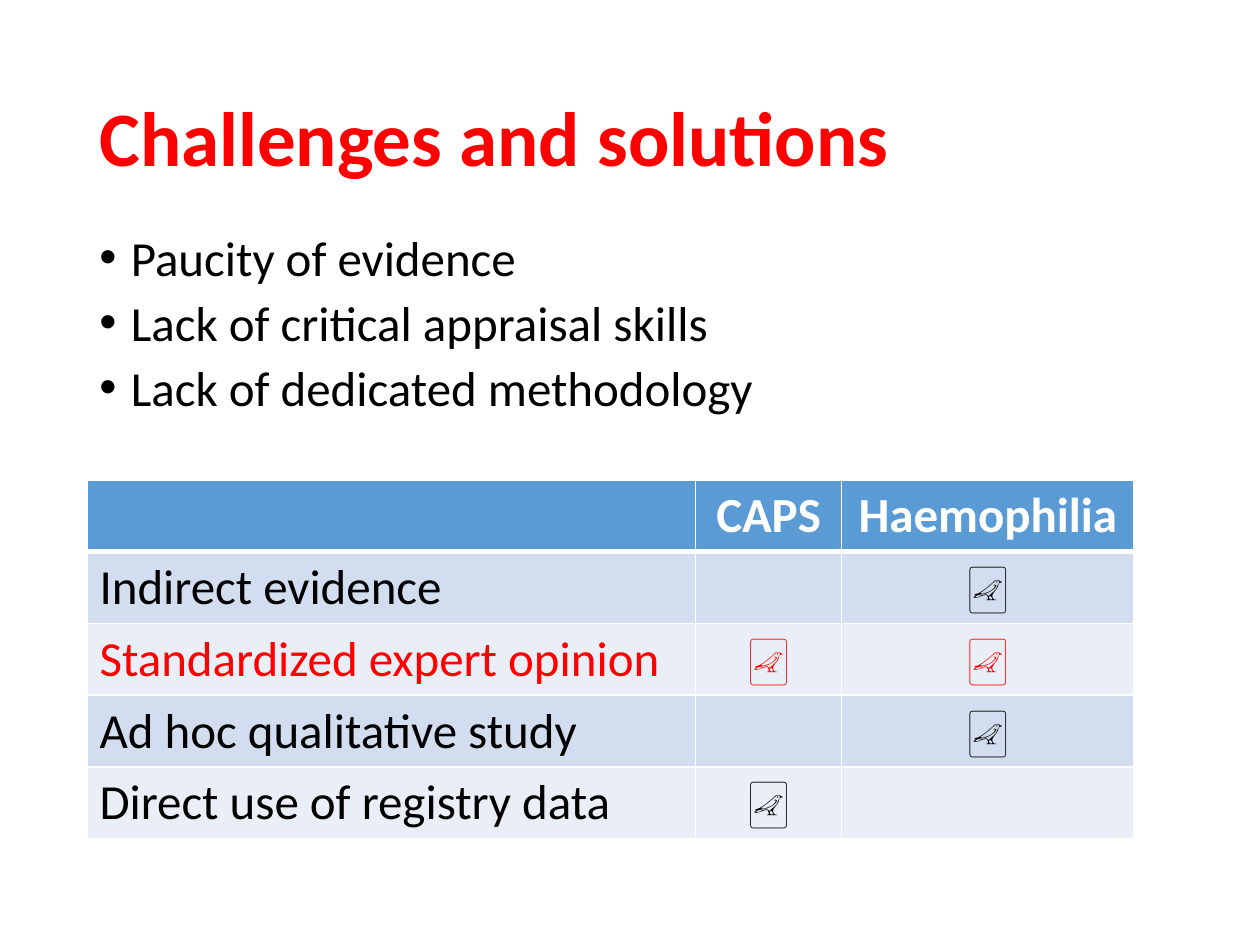
from pptx import Presentation
from pptx.dml.color import RGBColor
from pptx.enum.text import MSO_ANCHOR, PP_ALIGN
from pptx.oxml.ns import qn
from pptx.util import Inches, Pt
from lxml.etree import SubElement

FONT = "Calibri"
BLACK, WHITE, RED = "000000", "FFFFFF", "FF0000"
HEADER_FILL = "5B9BD5"
BAND_FILLS = ("D2DEEF", "EAEFF7")
TICK = "🀐"

BULLETS = (
    "Paucity of evidence",
    "Lack of critical appraisal skills",
    "Lack of dedicated methodology",
)
HEADER = ("", "CAPS", "Haemophilia")
SOLUTIONS = (
    ("Indirect evidence", "", TICK),
    ("Standardized expert opinion", TICK, TICK),
    ("Ad hoc qualitative study", "", TICK),
    ("Direct use of registry data", TICK, ""),
)
HIGHLIGHTED_ROW = 2
COLUMN_WIDTHS = (4.83, 1.16, 2.32)
HEADER_HEIGHT, ROW_HEIGHT = 0.56, 0.57


def rgb(value):
    return RGBColor.from_string(value)


def style_font(para, size, color, bold=False):
    font = para.font
    font.name, font.size, font.bold = FONT, Pt(size), bold
    font.color.rgb = rgb(color)


def add_title(slide, text):
    title = slide.shapes.title
    title.left, title.top = Inches(0.69), Inches(0.4)
    title.width, title.height = Inches(8.62), Inches(1.45)
    frame = title.text_frame
    frame.text = text
    frame.vertical_anchor = MSO_ANCHOR.MIDDLE
    para = frame.paragraphs[0]
    para.alignment = PP_ALIGN.LEFT
    para.line_spacing = 0.9
    style_font(para, 44, RED, bold=True)


def add_bullet(para):
    props = para._p.get_or_add_pPr()
    props.set("marL", str(Inches(0.25)))
    props.set("indent", str(-Inches(0.25)))
    SubElement(props, qn("a:buFont"), typeface="Arial")
    SubElement(props, qn("a:buChar"), char="•")


def add_bullet_list(slide, items):
    box = slide.shapes.add_textbox(Inches(0.69), Inches(1.85), Inches(8.62), Inches(1.61))
    frame = box.text_frame
    frame.word_wrap = True
    frame.text = "\n".join(items)
    for para in frame.paragraphs:
        para.line_spacing = 0.8
        para.space_before = Pt(10)
        add_bullet(para)
        style_font(para, 28, BLACK)


def set_borders(cell, bottom_width):
    props = cell._tc.get_or_add_tcPr()
    for side, width in (("L", 1), ("R", 1), ("T", 1), ("B", bottom_width)):
        line = SubElement(props, qn(f"a:ln{side}"), w=str(Pt(width)))
        fill = SubElement(line, qn("a:solidFill"))
        SubElement(fill, qn("a:srgbClr"), val=WHITE)


def fill_cell(cell, text, fill, color, centered, header):
    set_borders(cell, 3 if header else 1)
    cell.fill.solid()
    cell.fill.fore_color.rgb = rgb(fill)
    cell.text = text
    para = cell.text_frame.paragraphs[0]
    para.alignment = PP_ALIGN.CENTER if centered else PP_ALIGN.LEFT
    style_font(para, 28, color, bold=header)


def add_solution_table(slide):
    rows = (HEADER, *SOLUTIONS)
    heights = [HEADER_HEIGHT] + [ROW_HEIGHT] * len(SOLUTIONS)
    table = slide.shapes.add_table(
        len(rows), len(HEADER), Inches(0.69), Inches(3.81),
        Inches(sum(COLUMN_WIDTHS)), Inches(sum(heights)),
    ).table
    for column, width in zip(table.columns, COLUMN_WIDTHS):
        column.width = Inches(width)
    for r, (texts, height) in enumerate(zip(rows, heights)):
        table.rows[r].height = Inches(height)
        header = r == 0
        fill = HEADER_FILL if header else BAND_FILLS[(r - 1) % 2]
        color = WHITE if header else RED if r == HIGHLIGHTED_ROW else BLACK
        for c, text in enumerate(texts):
            fill_cell(table.cell(r, c), text, fill, color, c > 0, header)


def main():
    deck = Presentation()
    deck.slide_width, deck.slide_height = Inches(10), Inches(7.5)
    slide = deck.slides.add_slide(deck.slide_layouts[5])
    add_title(slide, "Challenges and solutions")
    add_bullet_list(slide, BULLETS)
    add_solution_table(slide)
    deck.save("out.pptx")


if __name__ == "__main__":
    main()
